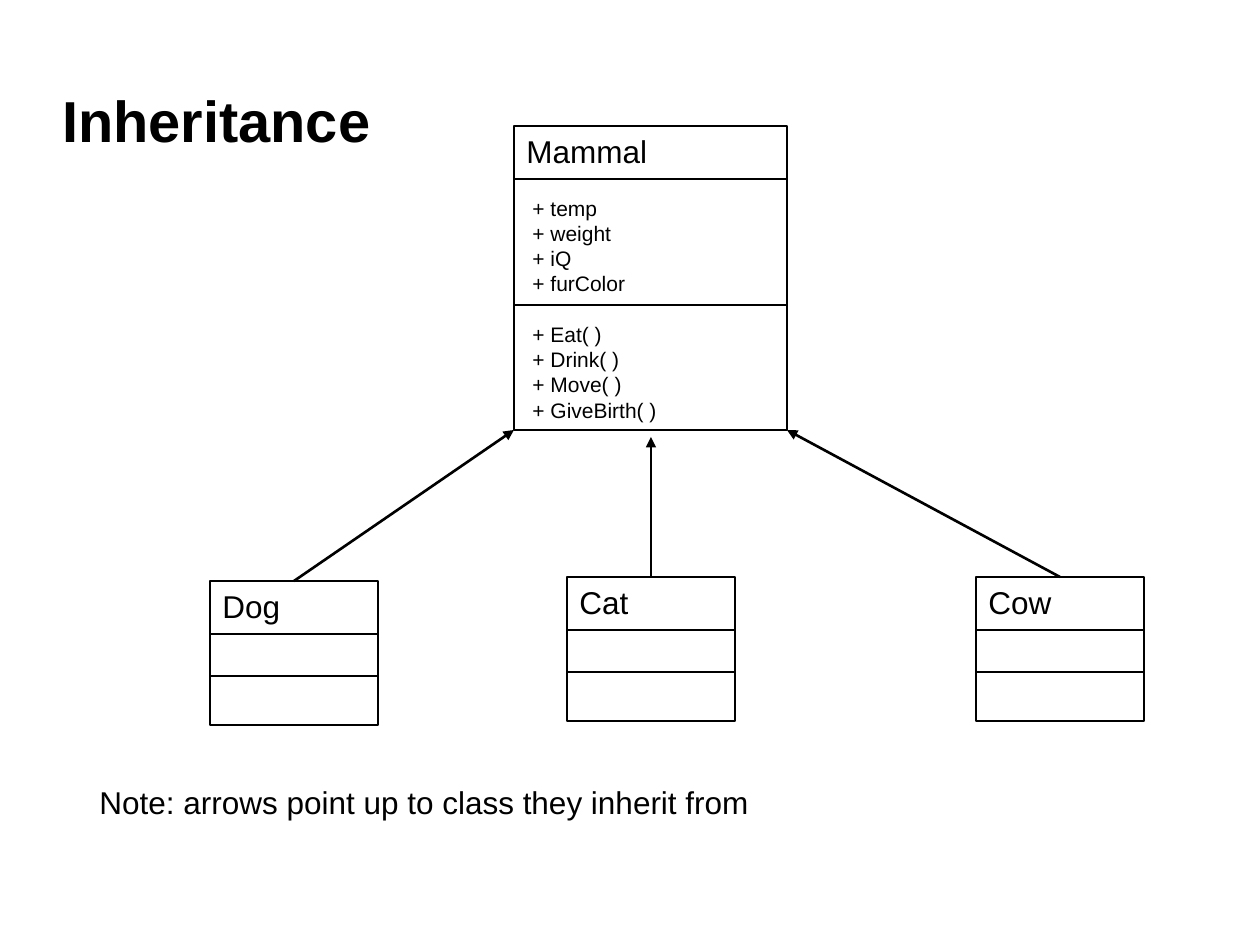
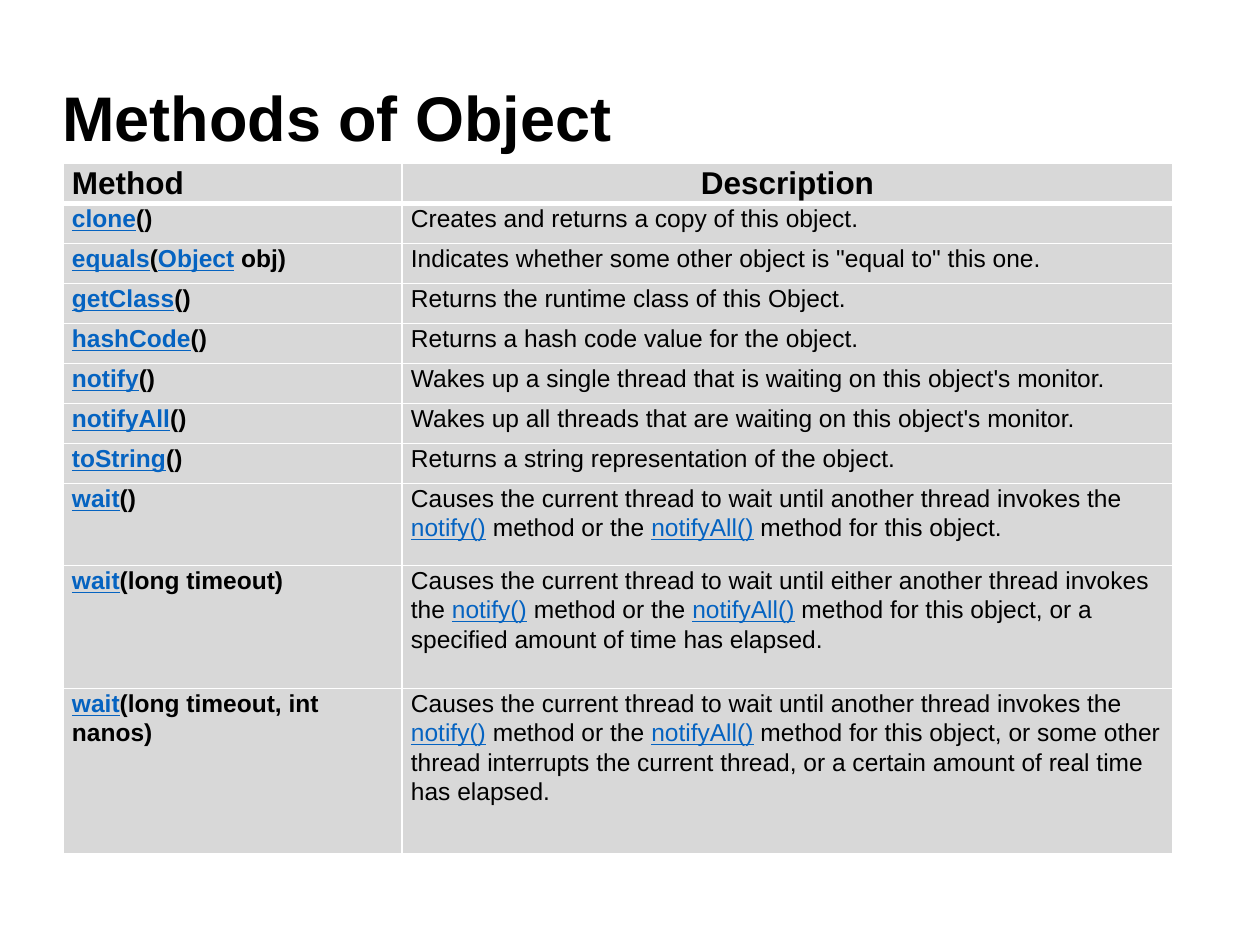
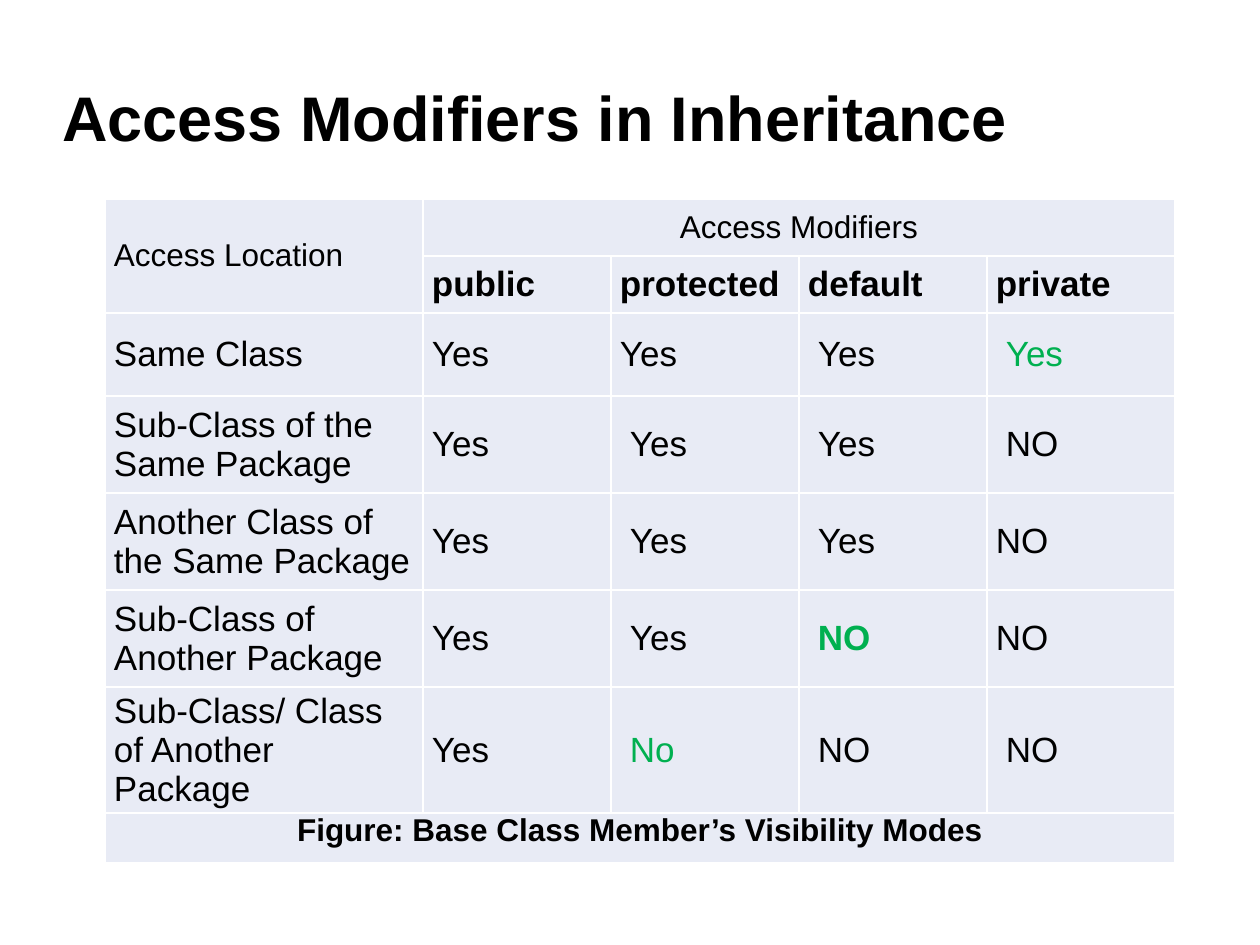
import pptx
import pptx.dml.color
import pptx.enum.shapes
import pptx.enum.text
import pptx.oxml
import pptx.oxml.ns
import pptx.util
from lxml import etree

PX = 914400 / 126
FONT = "Arial"
BLACK = pptx.dml.color.RGBColor(0x00, 0x00, 0x00)
WHITE = pptx.dml.color.RGBColor(0xFF, 0xFF, 0xFF)
LINK_BLUE = pptx.dml.color.RGBColor(0x05, 0x63, 0xC1)
ACCESS_GREEN = pptx.dml.color.RGBColor(0x00, 0xB0, 0x50)
METHOD_FILL = pptx.dml.color.RGBColor(0xD8, 0xD8, 0xD8)
ACCESS_FILL = pptx.dml.color.RGBColor(0xE8, 0xEB, 0xF5)

ALIGN = pptx.enum.text.PP_ALIGN
ANCHOR = pptx.enum.text.MSO_ANCHOR

# Text between asterisks is shown as a link
WAIT_START = "Causes the current thread to wait until "
NOTIFY = "the *notify()* method or the *notifyAll()* method for this object"
METHODS = [
    ("Method", "Description"),
    ("*clone*()", "Creates and returns a copy of this object."),
    ("*equals*(*Object* obj)",
     'Indicates whether some other object is "equal to" this one.'),
    ("*getClass*()", "Returns the runtime class of this Object."),
    ("*hashCode*()", "Returns a hash code value for the object."),
    ("*notify*()", "Wakes up a single thread that is waiting on this object's monitor."),
    ("*notifyAll*()", "Wakes up all threads that are waiting on this object's monitor."),
    ("*toString*()", "Returns a string representation of the object."),
    ("*wait*()", WAIT_START + "another thread invokes " + NOTIFY + "."),
    ("*wait*(long timeout)",
     WAIT_START + "either another thread invokes " + NOTIFY
     + ", or a specified amount of time has elapsed."),
    ("*wait*(long timeout, int nanos)",
     WAIT_START + "another thread invokes " + NOTIFY
     + ", or some other thread interrupts the current thread, "
     "or a certain amount of real time has elapsed."),
]

ACCESS = [
    ("Access Location", "Access Modifiers", "", "", ""),
    ("", "public", "protected", "default", "private"),
    ("Same Class", "Yes", "Yes", "Yes", "Yes"),
    ("Sub-Class of the Same Package", "Yes", "Yes", "Yes", "NO"),
    ("Another Class of the Same Package", "Yes", "Yes", "Yes", "NO"),
    ("Sub-Class of Another Package", "Yes", "Yes", "NO", "NO"),
    ("Sub-Class/ Class of Another Package", "Yes", "No", "NO", "NO"),
    ("Figure: Base Class Member’s Visibility Modes", "", "", "", ""),
]
GREEN_ANSWERS = {(2, 4), (5, 3), (6, 2)}
BOLD_ANSWERS = {(5, 3)}
FLUSH_ANSWERS = {(2, 2), (4, 4), (5, 4)}


def px(length):
    return pptx.util.Emu(round(length * PX))


def style(run, size, bold=False, color=BLACK):
    run.font.name = FONT
    run.font.size = pptx.util.Pt(size)
    run.font.bold = bold
    run.font.color.rgb = color


def add_text(slide, text, left, top, width, height, size, bold=False):
    frame = slide.shapes.add_textbox(px(left), px(top), px(width), px(height)).text_frame
    frame.word_wrap = True
    frame.text = text
    style(frame.paragraphs[0].runs[0], size, bold)
    return frame


def add_title(slide, text, size=36, top_inset=0):
    frame = add_text(slide, text, 50, 71, 1160, 106, size, True)
    frame.margin_top = px(top_inset)
    frame.vertical_anchor = ANCHOR.MIDDLE
    frame.paragraphs[0].line_spacing = 0.9


def add_line(slide, start, end, width, arrow=False):
    line = slide.shapes.add_connector(
        pptx.enum.shapes.MSO_CONNECTOR.STRAIGHT,
        px(start[0]), px(start[1]), px(end[0]), px(end[1]))
    line.line.color.rgb = BLACK
    line.line.width = pptx.util.Pt(width)
    if arrow:
        head = etree.SubElement(line.line._get_or_add_ln(), pptx.oxml.ns.qn("a:tailEnd"))
        head.set("type", "triangle")
    etree.SubElement(line._element.spPr, pptx.oxml.ns.qn("a:effectLst"))
    return line


def add_class(slide, name, left, top, width, height, dividers, member_groups=()):
    box = slide.shapes.add_shape(
        pptx.enum.shapes.MSO_SHAPE.RECTANGLE, px(left), px(top), px(width), px(height))
    box.shadow.inherit = False
    box.fill.background()
    box.line.color.rgb = BLACK
    box.line.width = pptx.util.Pt(0.75)
    frame = box.text_frame
    frame.vertical_anchor = ANCHOR.TOP
    frame.text = name
    frame.paragraphs[0].alignment = ALIGN.LEFT
    style(frame.paragraphs[0].runs[0], 18)
    for group in member_groups:
        for index, member in enumerate(group):
            paragraph = frame.add_paragraph()
            paragraph.text = "+ " + member
            paragraph.alignment = ALIGN.LEFT
            paragraph._p.get_or_add_pPr().set("marL", str(px(6)))
            if index == 0:
                paragraph.space_before = pptx.util.Pt(14.5)
            style(paragraph.runs[0], 12)
    for offset in dividers:
        add_line(slide, (left, top + offset), (left + width, top + offset), 1.25)
    return box


def add_grid(slide, left, top, columns, rows):
    table = slide.shapes.add_table(
        len(rows), len(columns), px(left), px(top), px(sum(columns)), px(sum(rows))).table
    table.first_row = table.horz_banding = False
    for column, width in zip(table.columns, columns):
        column.width = px(width)
    for row, height in zip(table.rows, rows):
        row.height = px(height)
    return table


def format_cell(cell, fill, top_border=1, bottom_border=1):
    cell.margin_left = cell.margin_right = px(9)
    cell.margin_top = cell.margin_bottom = 0
    properties = cell._tc.get_or_add_tcPr()
    for side, width in (("L", 1), ("R", 1), ("T", top_border), ("B", bottom_border)):
        properties.append(pptx.oxml.parse_xml(
            f'<a:ln{side} {pptx.oxml.ns.nsdecls("a")} w="{pptx.util.Pt(width)}">'
            f'<a:solidFill><a:srgbClr val="{WHITE}"/></a:solidFill></a:ln{side}>'))
    cell.fill.solid()
    cell.fill.fore_color.rgb = fill


def write_with_links(paragraph, text, size, bold):
    for index, part in enumerate(text.split("*")):
        if part:
            is_link = index % 2 == 1
            run = paragraph.add_run()
            run.text = part
            style(run, size, bold, LINK_BLUE if is_link else BLACK)
            run.font.underline = is_link


def build_inheritance(slide):
    add_title(slide, "Inheritance", 33, 6)
    add_class(slide, "Mammal", 514, 126, 273, 304, (53, 179), (
        ("temp", "weight", "iQ", "furColor"),
        ("Eat( )", "Drink( )", "Move( )", "GiveBirth( )")))
    # Subclasses, each with the point its arrow reaches
    for name, left, top, target in (
            ("Dog", 210, 581, (514, 430)),
            ("Cat", 567, 577, (651, 437)),
            ("Cow", 976, 577, (787, 430))):
        subclass = add_class(slide, name, left, top, 168, 144, (53, 95))
        arrow = add_line(slide, (left + 84, top), target, 1.5, True)
        arrow.begin_connect(subclass, 0)
    add_text(slide, "Note: arrows point up to class they inherit from",
             87, 777, 682, 50, 18)


def build_methods(slide):
    add_title(slide, "Methods of Object")
    table = add_grid(slide, 63, 163, (339, 771), [40] * 8 + [82, 123, 165])
    for row, texts in enumerate(METHODS):
        for column, text in enumerate(texts):
            cell = table.cell(row, column)
            format_cell(cell, METHOD_FILL, 3 if row == 1 else 1, 3 if row == 0 else 1)
            paragraph = cell.text_frame.paragraphs[0]
            paragraph.line_spacing = 1.07
            if (row, column) == (0, 1):
                paragraph.alignment = ALIGN.CENTER
            write_with_links(paragraph, text, 18 if row == 0 else 14,
                             row == 0 or column == 0)


def build_access(slide):
    add_title(slide, "Access Modifiers in Inheritance")
    table = add_grid(slide, 105, 199, [318] + [188] * 4, [57, 57, 83, 97, 97, 97, 113, 50])
    caption = len(ACCESS) - 1
    for row, texts in enumerate(ACCESS):
        for column, text in enumerate(texts):
            cell, place = table.cell(row, column), (row, column)
            format_cell(cell, ACCESS_FILL)
            if not text:
                continue
            cell.text_frame.text = text
            paragraph = cell.text_frame.paragraphs[0]
            style(paragraph.runs[0], 18 if row in (0, caption) else 20,
                  row in (1, caption) or place in BOLD_ANSWERS,
                  ACCESS_GREEN if place in GREEN_ANSWERS else BLACK)
            if row != caption:
                cell.vertical_anchor = ANCHOR.MIDDLE
            if place in ((0, 1), (caption, 0)):
                paragraph.alignment = ALIGN.CENTER
            elif row < 2:
                paragraph.alignment = ALIGN.JUSTIFY
            elif column >= 2 and place not in FLUSH_ANSWERS:
                cell.margin_left = px(19)
    # Spanning headings and caption
    table.cell(0, 0).merge(table.cell(1, 0))
    table.cell(0, 1).merge(table.cell(0, 4))
    table.cell(caption, 0).merge(table.cell(caption, 4))


def main():
    deck = pptx.Presentation()
    deck.slide_width, deck.slide_height = px(1260), px(945)
    for build in (build_inheritance, build_methods, build_access):
        build(deck.slides.add_slide(deck.slide_layouts[6]))
    deck.save("out.pptx")


if __name__ == "__main__":
    main()
